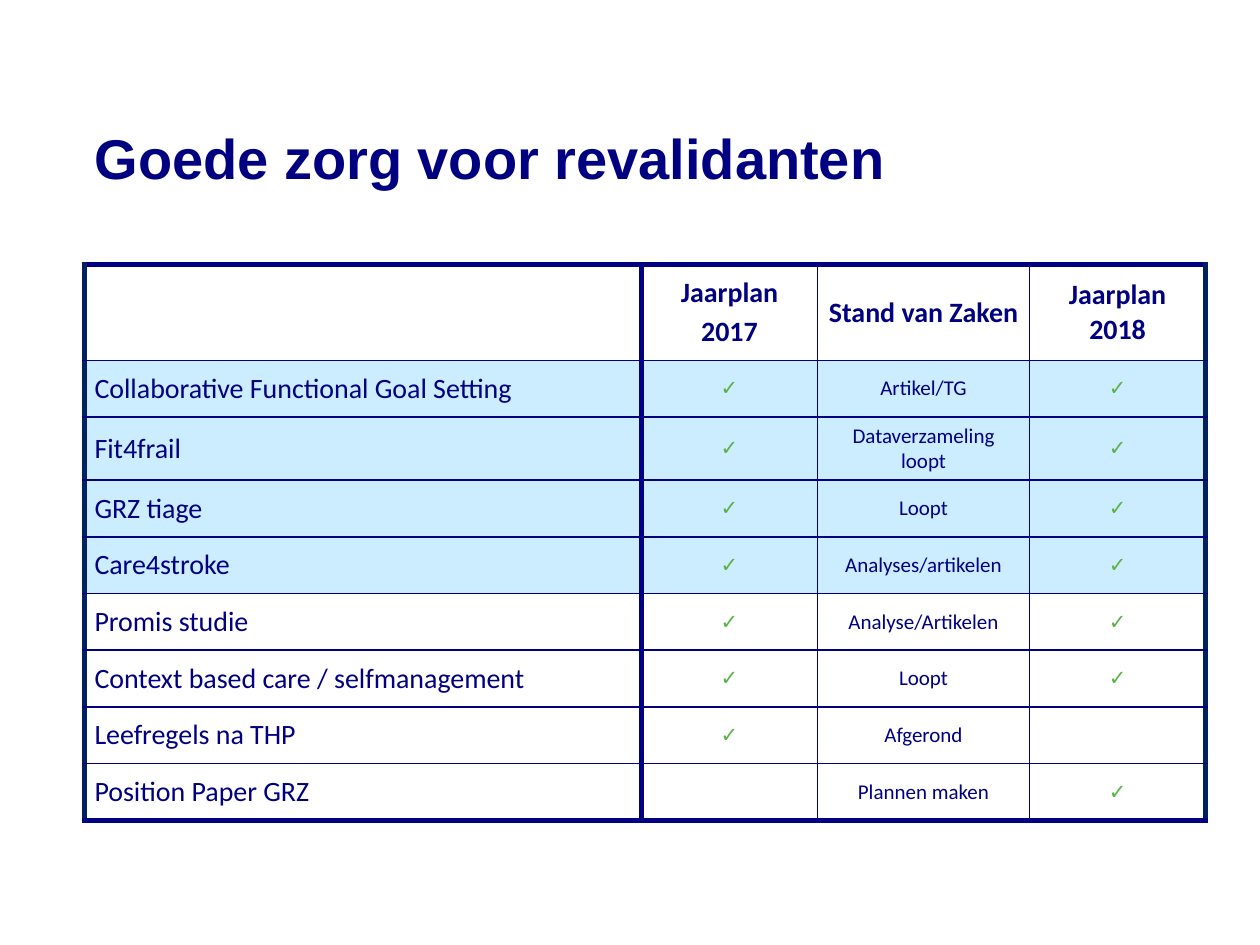
from lxml.etree import SubElement
from pptx import Presentation
from pptx.dml.color import RGBColor
from pptx.enum.text import MSO_ANCHOR as Anchor, PP_ALIGN as Align
from pptx.oxml.ns import qn
from pptx.util import Inches, Pt

TITLE = "Goede zorg voor revalidanten"
CHECK = "✓"
HEADER = ["", "Jaarplan\n2017", "Stand van Zaken", "Jaarplan 2018"]
# project, in plan 2017, status, in plan 2018, highlighted
PROJECTS = [
    ("Collaborative Functional Goal Setting", True, "Artikel/TG", True, True),
    ("Fit4frail", True, "Dataverzameling loopt", True, True),
    ("GRZ tiage", True, "Loopt", True, True),
    ("Care4stroke", True, "Analyses/artikelen", True, True),
    ("Promis studie", True, "Analyse/Artikelen", True, False),
    ("Context based care / selfmanagement", True, "Loopt", True, False),
    ("Leefregels na THP", True, "Afgerond", False, False),
    ("Position Paper GRZ", False, "Plannen maken", True, False),
]
COLUMN_WIDTHS = [4.42, 1.4, 1.68, 1.4]
HEADER_HEIGHT, ROW_HEIGHT = 0.76, 0.45

THEME = {
    "navy": "000080", "edge": "002060", "green": "5BB244",
    "highlight": "CCECFF", "white": "FFFFFF",
    "thin": 1, "thick": 3,
}
FORMATS = {
    "title": {"name": "Arial", "size": Pt(32), "bold": True, "color": "navy"},
    "header": {"name": "Calibri", "size": Pt(16), "bold": True, "color": "navy"},
    "project": {"name": "Calibri", "size": Pt(16), "bold": False, "color": "navy"},
    "status": {"name": "Calibri", "size": Pt(12), "bold": False, "color": "navy"},
    "check": {"name": "Calibri", "size": Pt(12), "bold": True, "color": "green"},
}


def add_text(frame, text, style, align=Align.LEFT):
    """Write one paragraph per line of text."""
    for index, line in enumerate(text.split("\n")):
        para = frame.add_paragraph() if index else frame.paragraphs[0]
        para.alignment = align
        if index:
            para.space_before = Pt(3.2)
        span = para.add_run()
        span.text = line
        for key, value in FORMATS[style].items():
            if key == "color":
                span.font.color.rgb = RGBColor.from_string(THEME[value])
            else:
                setattr(span.font, key, value)


def set_borders(cell, sides):
    """Put border lines, given as side: (colour, width), ahead of the cell's fill."""
    properties = cell._tc.get_or_add_tcPr()
    for position, (side, (color, width)) in enumerate(sides.items()):
        line = SubElement(properties, qn(f"a:ln{side}"), w=str(Pt(THEME[width])))
        fill = SubElement(line, qn("a:solidFill"))
        SubElement(fill, qn("a:srgbClr"), val=THEME[color])
        properties.insert(position, line)


def borders_at(row, column, last_row, last_column):
    thin, thick, edge = ("navy", "thin"), ("navy", "thick"), ("edge", "thick")
    left = {0: edge, 1: thick}.get(column, thin)
    right = {0: thick, last_column: edge}.get(column, thin)
    return {
        "L": left, "R": right,
        "T": thick if row == 0 else thin,
        "B": thick if row == last_row else thin,
    }


def add_title(page):
    box = page.shapes.add_textbox(Inches(0.75), Inches(0.68), Inches(9.37), Inches(1.13))
    frame = box.text_frame
    frame.word_wrap = True
    frame.vertical_anchor = Anchor.MIDDLE
    for side in ("left", "top", "right", "bottom"):
        setattr(frame, f"margin_{side}", 0)
    add_text(frame, TITLE, "title")


def add_plan_table(page):
    rows = [(HEADER, ["header"] * 4, "white")]
    for project, plan_2017, status, plan_2018, highlighted in PROJECTS:
        texts = [project, CHECK if plan_2017 else "", status, CHECK if plan_2018 else ""]
        rows.append((texts, ["project", "check", "status", "check"],
                     "highlight" if highlighted else "white"))

    height = HEADER_HEIGHT + ROW_HEIGHT * len(PROJECTS)
    table = page.shapes.add_table(
        len(rows), len(COLUMN_WIDTHS), Inches(0.67), Inches(2.1),
        Inches(sum(COLUMN_WIDTHS)), Inches(height)).table
    table.first_row = table.horz_banding = False
    for column, width in zip(table.columns, COLUMN_WIDTHS):
        column.width = Inches(width)

    for r, (texts, styles, fill) in enumerate(rows):
        table.rows[r].height = Inches(ROW_HEIGHT if r else HEADER_HEIGHT)
        for c, (text, style) in enumerate(zip(texts, styles)):
            cell = table.cell(r, c)
            cell.vertical_anchor = Anchor.MIDDLE
            cell.margin_left = cell.margin_right = Inches(0.08)
            cell.margin_top = cell.margin_bottom = Inches(0.05)
            cell.fill.solid()
            cell.fill.fore_color.rgb = RGBColor.from_string(THEME[fill])
            set_borders(cell, borders_at(r, c, len(rows) - 1, len(texts) - 1))
            if text:
                add_text(cell.text_frame, text, style, Align.CENTER if c else Align.LEFT)


def main():
    deck = Presentation()
    deck.slide_width, deck.slide_height = Inches(10), Inches(7.5)
    page = deck.slides.add_slide(deck.slide_layouts[6])
    add_title(page)
    add_plan_table(page)
    deck.save("out.pptx")


if __name__ == "__main__":
    main()
